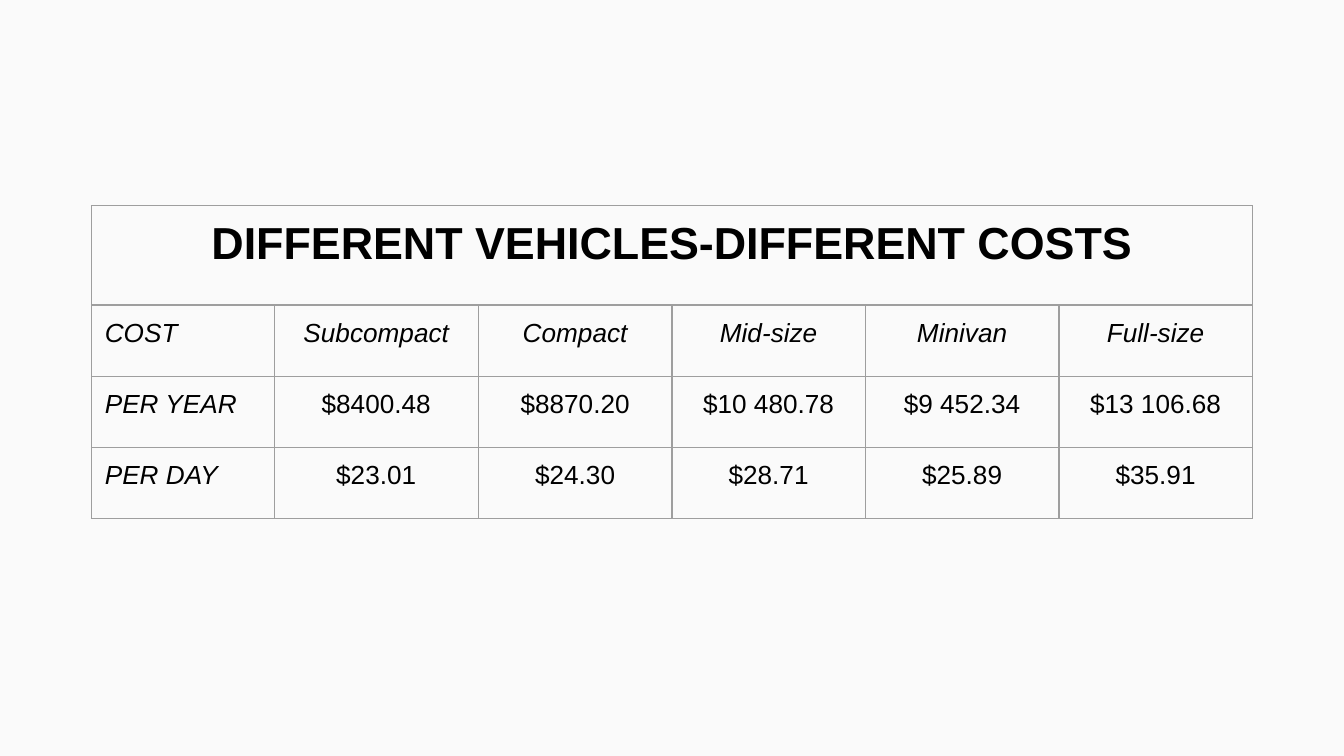
import pptx
import pptx.dml.color
import pptx.enum.text
import pptx.oxml
import pptx.oxml.ns
import pptx.util

Inches = pptx.util.Inches
ALIGN = pptx.enum.text.PP_ALIGN

COLUMN_WIDTHS = [1.36, 1.52] + [1.44] * 4
ROW_HEIGHTS = [0.74] + [0.53] * 3
HEADING = "DIFFERENT VEHICLES-DIFFERENT COSTS"
COSTS = [
    ["COST", "Subcompact", "Compact", "Mid-size", "Minivan", "Full-size"],
    ["PER YEAR", "$8400.48", "$8870.20", "$10 480.78", "$9 452.34", "$13 106.68"],
    ["PER DAY", "$23.01", "$24.30", "$28.71", "$25.89", "$35.91"],
]


def color(value):
    return pptx.dml.color.RGBColor.from_string(value)


class SlideBuilder:
    font = "Arial"
    text_color = "000000"
    border_color = "9E9E9E"
    border_width = 0.75
    cell_margin = 0.1

    def __init__(self, slide):
        self.slide = slide

    def background(self, value):
        fill = self.slide.background.fill
        fill.solid()
        fill.fore_color.rgb = color(value)

    def table(self, left, top, column_widths, row_heights):
        frame = self.slide.shapes.add_table(
            len(row_heights), len(column_widths), Inches(left), Inches(top),
            Inches(sum(column_widths)), Inches(sum(row_heights)))
        table = frame.table
        table.first_row = table.horz_banding = False
        for column, width in zip(table.columns, column_widths):
            column.width = Inches(width)
        for row, height in zip(table.rows, row_heights):
            row.height = Inches(height)
        for cell in table.iter_cells():
            cell.fill.background()
            self.borders(cell)
        return table

    def borders(self, cell):
        properties = cell._tc.get_or_add_tcPr()
        for index, side in enumerate("LRTB"):
            properties.insert(index, pptx.oxml.parse_xml(
                f'<a:ln{side} {pptx.oxml.ns.nsdecls("a")} w="{pptx.util.Pt(self.border_width)}">'
                f'<a:solidFill><a:srgbClr val="{self.border_color}"/></a:solidFill></a:ln{side}>'))

    def cell_text(self, cell, text, size, alignment=ALIGN.CENTER, bold=False, italic=False):
        margin = Inches(self.cell_margin)
        cell.margin_left = cell.margin_right = cell.margin_top = cell.margin_bottom = margin
        cell.text_frame.text = text
        paragraph = cell.text_frame.paragraphs[0]
        paragraph.alignment = alignment
        font = paragraph.runs[0].font
        font.name = self.font
        font.size = pptx.util.Pt(size)
        font.bold = bold
        font.italic = italic
        font.color.rgb = color(self.text_color)


def main():
    presentation = pptx.Presentation()
    presentation.slide_width = Inches(10)
    presentation.slide_height = presentation.slide_width * 9 // 16
    builder = SlideBuilder(presentation.slides.add_slide(presentation.slide_layouts[6]))
    builder.background("FAFAFA")

    table = builder.table(0.68, 1.53, COLUMN_WIDTHS, ROW_HEIGHTS)
    table.cell(0, 0).merge(table.cell(0, len(COLUMN_WIDTHS) - 1))
    builder.cell_text(table.cell(0, 0), HEADING, 24, bold=True)
    for row, values in enumerate(COSTS, start=1):
        for column, value in enumerate(values):
            builder.cell_text(
                table.cell(row, column), value, 14,
                alignment=ALIGN.CENTER if column else ALIGN.LEFT,
                italic=row == 1 or column == 0)

    presentation.save("out.pptx")


if __name__ == "__main__":
    main()
